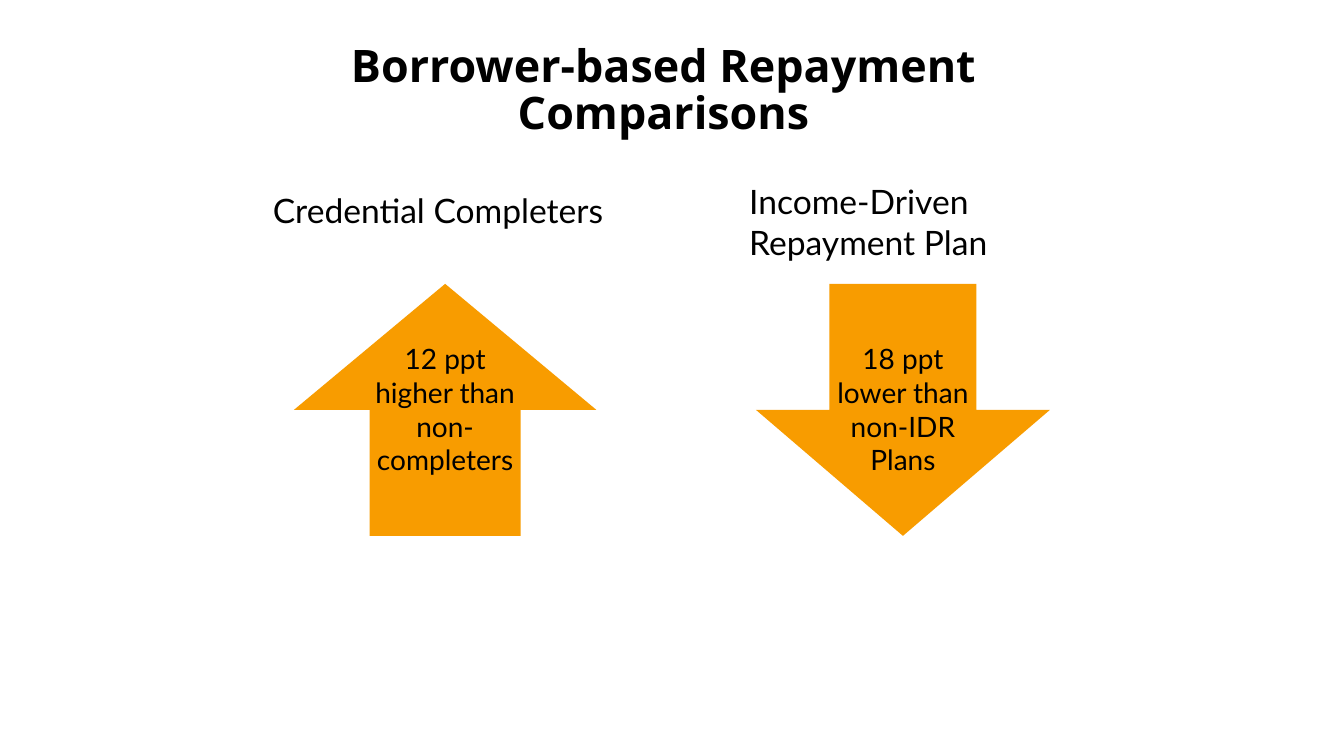
from pptx import Presentation
from pptx.dml.color import RGBColor
from pptx.enum.shapes import MSO_SHAPE
from pptx.enum.text import MSO_ANCHOR, PP_ALIGN
from pptx.util import Inches, Pt

COLORS = {"arrow": "F89C00", "text": "000000"}
WIDTH, HEIGHT = Inches(13.33), Inches(7.5)
COLUMNS, ROWS = 160, 90


def place(left, top, width, height):
    """Turn columns and rows of the slide grid into lengths."""
    column, row = WIDTH / COLUMNS, HEIGHT / ROWS
    return round(left * column), round(top * row), round(width * column), round(height * row)


def add_label(slide, area, words, size, font="Lato", bold=False, align=PP_ALIGN.LEFT):
    """Add a wrapped text box over a grid area and return its text frame."""
    frame = slide.shapes.add_textbox(*place(*area)).text_frame
    frame.word_wrap = True
    frame.vertical_anchor = MSO_ANCHOR.TOP
    frame.text = words
    paragraph = frame.paragraphs[0]
    paragraph.alignment = align
    for run in paragraph.runs:
        run.font.name = font
        run.font.size = Pt(size)
        run.font.bold = bold
        run.font.color.rgb = RGBColor.from_string(COLORS["text"])
    return frame


def add_title(slide, words):
    """Add the centred headline with tight line spacing."""
    headline = add_label(slide, (26, 4.2, 106, 12), words, 32, "Noto Sans", True, PP_ALIGN.CENTER)
    headline.margin_top = Inches(0.1)
    headline.paragraphs[0].line_spacing = 0.87


def add_arrow(slide, direction, left, width, finding_left, finding):
    """Add a block arrow with its finding written over it."""
    arrow = slide.shapes.add_shape(direction, *place(left, 33.8, width, 30))
    arrow.shadow.inherit = False
    arrow.fill.solid()
    arrow.fill.fore_color.rgb = RGBColor.from_string(COLORS["arrow"])
    arrow.line.fill.background()
    add_label(slide, (finding_left, 40.1, 20, 17.4), finding, 20, align=PP_ALIGN.CENTER)


def main():
    """Build the repayment comparison slide and save it."""
    deck = Presentation()
    deck.slide_width, deck.slide_height = WIDTH, HEIGHT
    slide = deck.slides.add_slide(deck.slide_layouts[6])
    add_title(slide, "Borrower-based Repayment Comparisons")
    add_label(slide, (31.3, 22, 44, 9), "Credential Completers", 24)
    add_label(slide, (88, 21, 49, 11), "Income-Driven Repayment Plan", 24)
    add_arrow(slide, MSO_SHAPE.UP_ARROW, 35, 36, 43, "12 ppt higher than non-completers")
    add_arrow(slide, MSO_SHAPE.DOWN_ARROW, 90, 35, 97.5, "18 ppt lower than non-IDR Plans")
    deck.save("out.pptx")


if __name__ == "__main__":
    main()
